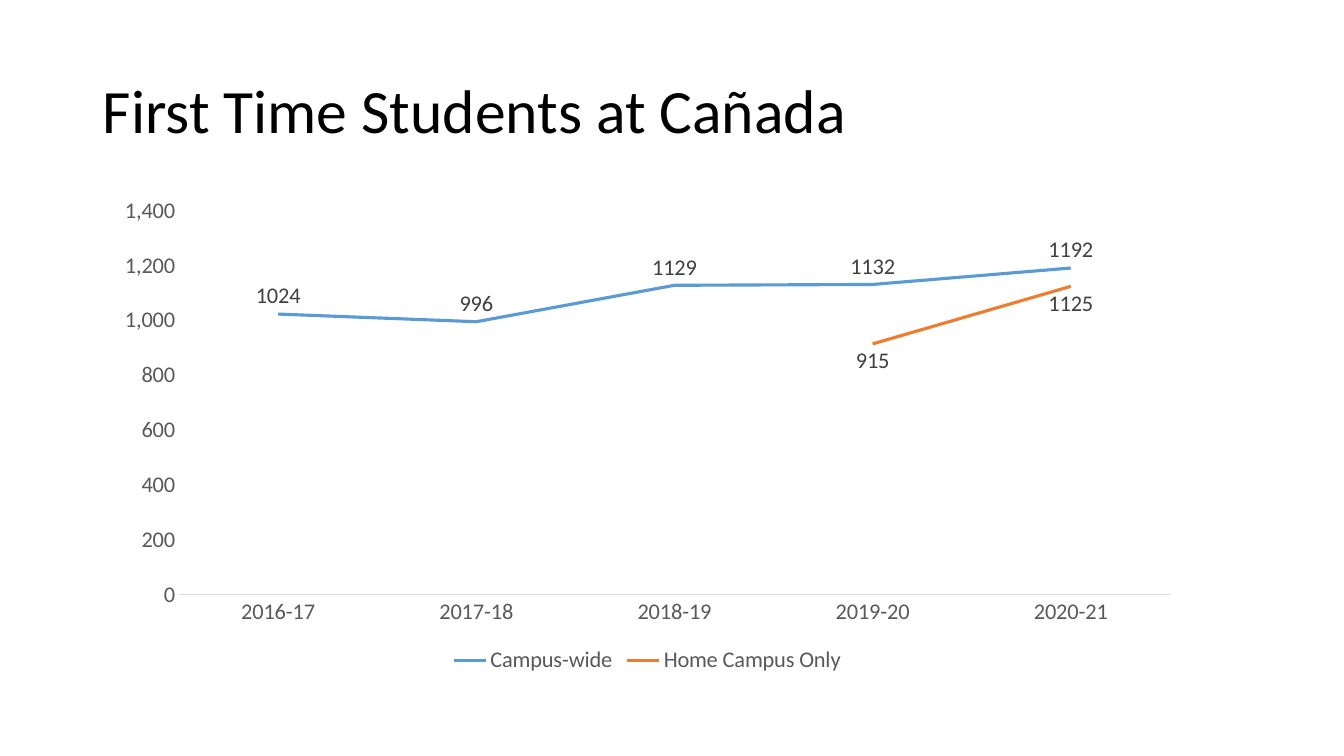
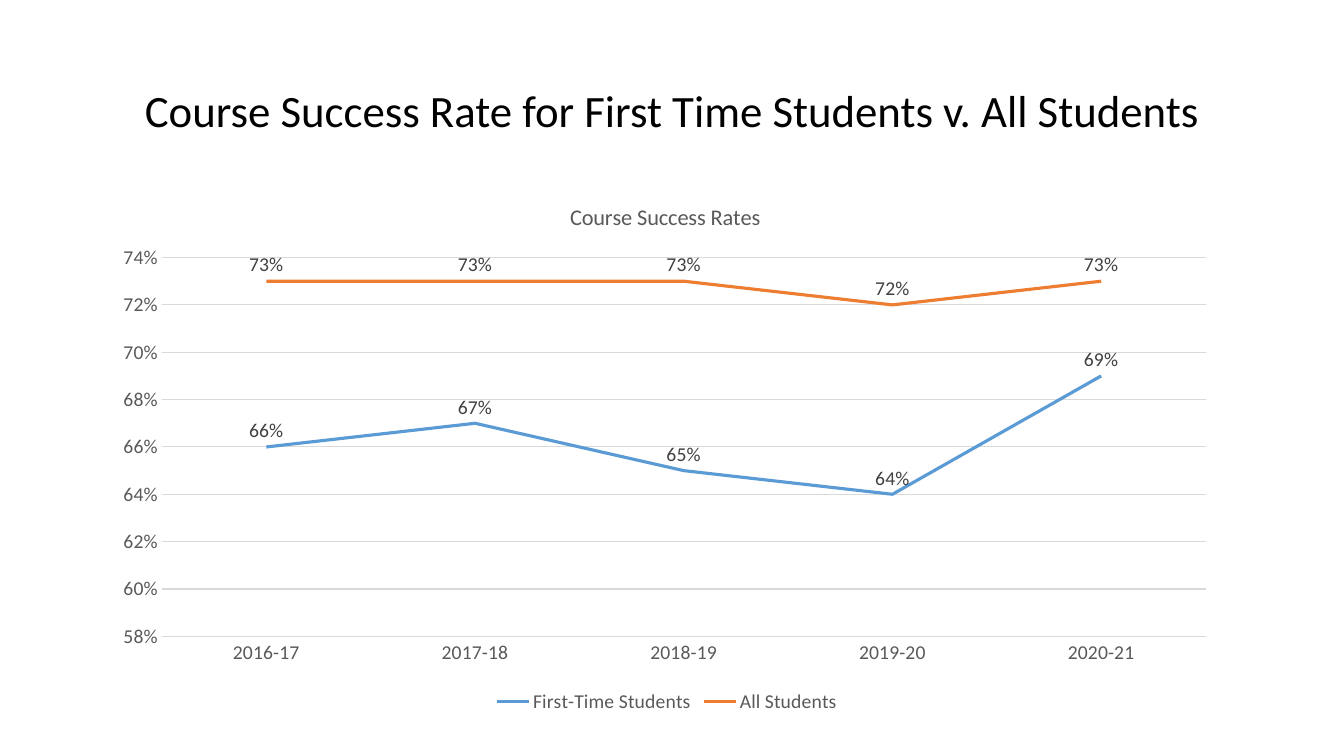
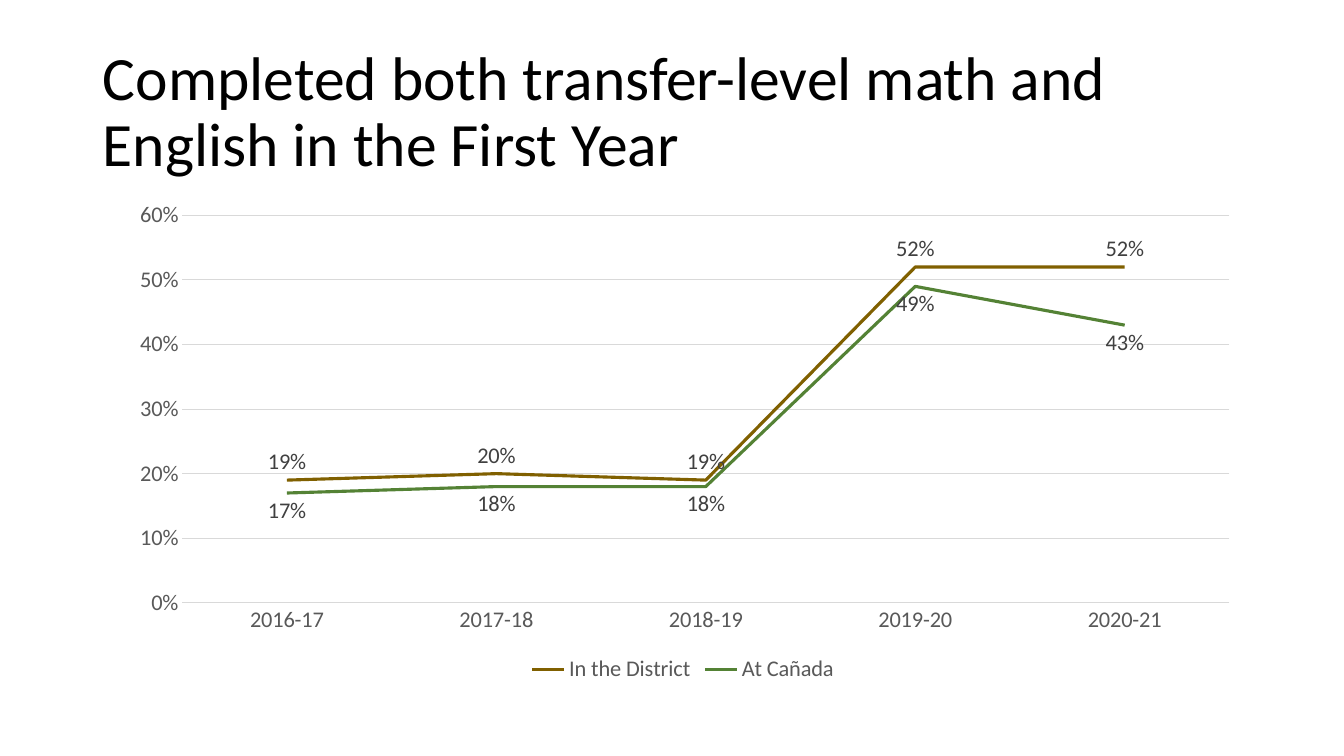
import pptx
import pptx.chart.data
import pptx.dml.color
import pptx.enum.chart
import pptx.enum.text
import pptx.oxml.ns
import pptx.oxml.xmlchemy
import pptx.util

Inches, Pt = pptx.util.Inches, pptx.util.Pt
RGBColor = pptx.dml.color.RGBColor
Align = pptx.enum.text.PP_ALIGN
LabelPosition = pptx.enum.chart.XL_LABEL_POSITION
ABOVE, BELOW = LabelPosition.ABOVE, LabelPosition.BELOW

# Shared style
FONT = "Calibri"
BLACK = RGBColor(0x00, 0x00, 0x00)
AXIS_GREY = RGBColor(0x59, 0x59, 0x59)
LABEL_GREY = RGBColor(0x40, 0x40, 0x40)
RULE_GREY = RGBColor(0xD9, 0xD9, 0xD9)
BLUE = RGBColor(0x5B, 0x9B, 0xD5)
ORANGE = RGBColor(0xED, 0x7D, 0x31)
BROWN = RGBColor(0x80, 0x60, 0x00)
GREEN = RGBColor(0x54, 0x82, 0x35)
YEARS = ["2016-17", "2017-18", "2018-19", "2019-20", "2020-21"]


class Deck:
    """Holds the style and the slide being built."""

    def __init__(self):
        self.presentation = pptx.Presentation()
        self.presentation.slide_width = Inches(13.33)
        self.presentation.slide_height = Inches(7.5)
        self.slide = None

    def style(self, font, size, color):
        font.name = FONT
        font.size = Pt(size)
        font.bold = False
        font.color.rgb = color

    def rule(self, line, color=RULE_GREY, width=0.75):
        line.color.rgb = color
        line.width = Pt(width)

    def add_slide(self, heading, size=44, align=Align.LEFT):
        title_only = self.presentation.slide_layouts[5]
        self.slide = self.presentation.slides.add_slide(title_only)
        title = self.slide.shapes.title
        title.left, title.top = Inches(0.92), Inches(0.4)
        title.width, title.height = Inches(11.5), Inches(1.45)
        frame = title.text_frame
        frame.word_wrap = True
        frame.auto_size = pptx.enum.text.MSO_AUTO_SIZE.NONE
        frame.vertical_anchor = pptx.enum.text.MSO_ANCHOR.MIDDLE
        paragraph = frame.paragraphs[0]
        paragraph.alignment = align
        paragraph.line_spacing = 0.9
        run = paragraph.add_run()
        run.text = heading
        self.style(run.font, size, BLACK)

    def place(self, part, inner=False, **fractions):
        """Set the manual layout of a chart part, in fractions of the chart."""
        qn = pptx.oxml.ns.qn
        new_element = pptx.oxml.xmlchemy.OxmlElement
        layout = part.find(qn("c:layout"))
        if layout is None:
            layout = new_element("c:layout")
            part.insert(len(part.findall(qn("c:tx"))), layout)
        settings = [("layoutTarget", "inner")] if inner else []
        settings += [(f"{axis}Mode", "edge") for axis in "xy"]
        settings += fractions.items()
        manual = new_element("c:manualLayout")
        layout.append(manual)
        for tag, value in settings:
            setting = new_element(f"c:{tag}")
            setting.set("val", str(value))
            manual.append(setting)

    def add_line_chart(self, box, plot_box, series, scale, size=16,
                       axis_format="0%", label_format="0%", grid=True, title=None):
        data = pptx.chart.data.CategoryChartData(number_format=label_format)
        data.categories = YEARS
        for name, values, _, _ in series:
            data.add_series(name, values)
        chart = self.slide.shapes.add_chart(
            pptx.enum.chart.XL_CHART_TYPE.LINE, *map(Inches, box), data).chart
        self.style(chart.font, size, BLACK)

        # Title and plot area
        chart.has_title = title is not None
        if title:
            run = chart.chart_title.text_frame.paragraphs[0].add_run()
            run.text = title
            self.style(run.font, 16, AXIS_GREY)
            self.place(chart.chart_title._element, x=0.41, y=0.04)
        plot_area = chart._chartSpace.chart.plotArea
        self.place(plot_area, inner=True, **dict(zip("xywh", plot_box)))

        # Legend
        chart.has_legend = True
        chart.legend.position = pptx.enum.chart.XL_LEGEND_POSITION.BOTTOM
        chart.legend.include_in_layout = False
        self.style(chart.legend.font, size, AXIS_GREY)

        # Axes
        for axis in (chart.category_axis, chart.value_axis):
            axis.major_tick_mark = pptx.enum.chart.XL_TICK_MARK.NONE
            axis.minor_tick_mark = pptx.enum.chart.XL_TICK_MARK.NONE
            self.style(axis.tick_labels.font, size, AXIS_GREY)
        self.rule(chart.category_axis.format.line)
        amounts = chart.value_axis
        amounts.minimum_scale, amounts.maximum_scale, amounts.major_unit = scale
        amounts.format.line.fill.background()
        amounts.tick_labels.number_format = axis_format
        amounts.tick_labels.number_format_is_linked = False
        amounts.has_major_gridlines = grid
        if grid:
            self.rule(amounts.major_gridlines.format.line)

        # Lines and their labels
        plot = chart.plots[0]
        plot.vary_by_categories = False
        for line, (_, _, color, position) in zip(plot.series, series):
            line.smooth = False
            line.marker.style = pptx.enum.chart.XL_MARKER_STYLE.NONE
            self.rule(line.format.line, color, 2.25)
            labels = line.data_labels
            labels.show_value = True
            labels.position = position
            labels.number_format = label_format
            labels.number_format_is_linked = False
            self.style(labels.font, size, LABEL_GREY)


def main():
    deck = Deck()

    # Enrolment
    deck.add_slide("First Time Students at Cañada")
    deck.add_line_chart(
        (1.02, 1.85, 10.8, 4.88), (0.07, 0.05, 0.91, 0.78),
        [("Campus-wide", [1024, 996, 1129, 1132, 1192], BLUE, ABOVE),
         ("Home Campus Only", [None, None, None, 915, 1125], ORANGE, BELOW)],
        scale=(0, 1400, 200), axis_format="#,##0", label_format="General", grid=False)

    # Course success
    deck.add_slide("Course Success Rate for First Time Students v. All Students",
                   size=32, align=Align.CENTER)
    deck.add_line_chart(
        (1.05, 1.75, 11.13, 5.37), (0.05, 0.15, 0.93, 0.7),
        [("First-Time Students", [0.66, 0.67, 0.65, 0.64, 0.69], BLUE, ABOVE),
         ("All Students", [0.73, 0.73, 0.73, 0.72, 0.73], ORANGE, ABOVE)],
        scale=(0.58, 0.74, 0.02), size=14, title="Course Success Rates")

    # Math and English completion
    deck.add_slide("Completed both transfer-level math and English in the First Year")
    deck.add_line_chart(
        (1.13, 1.89, 11.29, 4.93), (0.06, 0.05, 0.92, 0.78),
        [("In the District", [0.19, 0.2, 0.19, 0.52, 0.52], BROWN, ABOVE),
         ("At Cañada", [0.17, 0.18, 0.18, 0.49, 0.43], GREEN, BELOW)],
        scale=(0, 0.6, 0.1))

    deck.presentation.save("out.pptx")


if __name__ == "__main__":
    main()
